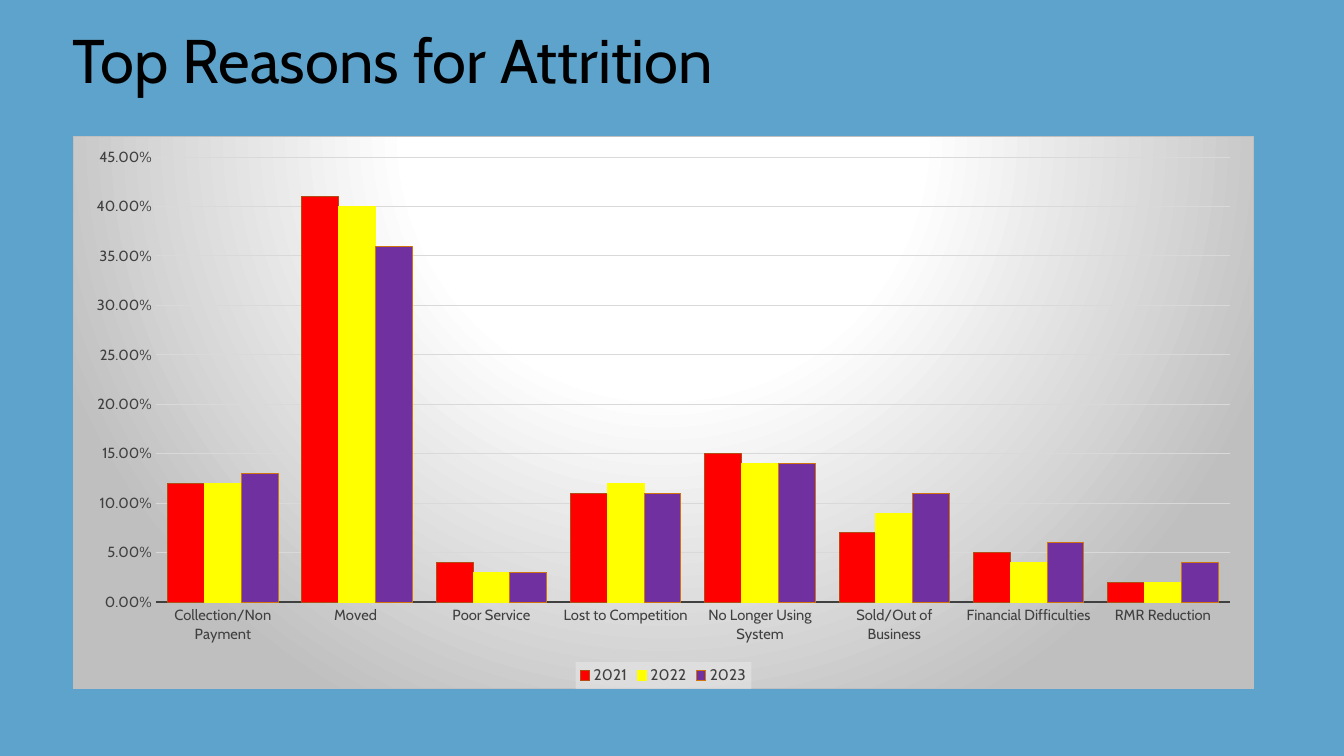
from pptx import Presentation
from pptx.chart.data import CategoryChartData
from pptx.dml.color import RGBColor
from pptx.enum.chart import XL_CHART_TYPE as ChartType, XL_LEGEND_POSITION as LegendPosition
from pptx.enum.chart import XL_TICK_MARK as TickMark
from pptx.enum.text import MSO_ANCHOR as Anchor, PP_ALIGN as Align
from pptx.oxml import parse_xml
from pptx.util import Inches, Pt

FONT = "Cabin"
SKY = RGBColor(0x5D, 0xA3, 0xCC)
BLACK = RGBColor(0, 0, 0)
DARK_GRAY = RGBColor(0x40, 0x40, 0x40)
GRID_GRAY = RGBColor(0xD9, 0xD9, 0xD9)
RED = RGBColor(0xFF, 0, 0)
RUST = RGBColor(0xB2, 0x4D, 0x15)
YELLOW = RGBColor(0xFF, 0xFF, 0)
PURPLE = RGBColor(0x70, 0x30, 0xA0)
ORANGE = RGBColor(0xCF, 0x74, 0x0E)

REASONS = ["Collection/Non Payment", "Moved ", "Poor Service", "Lost to Competition",
           "No Longer Using System", "Sold/Out of Business", "Financial Difficulties",
           "RMR Reduction"]
# Year, share by reason, fill, outline
YEARS = [
    ("2021", [0.12, 0.41, 0.04, 0.11, 0.15, 0.07, 0.05, 0.02], RED, RUST),
    ("2022", [0.12, 0.4, 0.03, 0.12, 0.14, 0.09, 0.04, 0.02], YELLOW, YELLOW),
    ("2023", [0.13, 0.36, 0.03, 0.11, 0.14, 0.11, 0.06, 0.04], PURPLE, ORANGE),
]

CHART_BACKGROUND = """
<a:gradFill><a:gsLst>
  <a:gs pos="0"><a:srgbClr val="FFFFFF"/></a:gs>
  <a:gs pos="39000"><a:srgbClr val="FFFFFF"/></a:gs>
  <a:gs pos="100000"><a:srgbClr val="BFBFBF"/></a:gs>
</a:gsLst>
<a:path path="circle"><a:fillToRect l="50000" t="-80000" r="50000" b="180000"/></a:path>
</a:gradFill>
<a:ln w="9525"><a:solidFill><a:srgbClr val="BFBFBF"/></a:solidFill></a:ln>"""
LEGEND_BACKGROUND = """
<a:solidFill><a:srgbClr val="F2F2F2"><a:alpha val="39000"/></a:srgbClr></a:solidFill>
<a:ln><a:noFill/></a:ln>"""


def add_background(element, fill_xml):
    """Put shape properties just before the text properties of a chart part."""
    properties = parse_xml(
        '<c:spPr xmlns:c="http://schemas.openxmlformats.org/drawingml/2006/chart" '
        'xmlns:a="http://schemas.openxmlformats.org/drawingml/2006/main">'
        + fill_xml + "</c:spPr>")
    element.find("{*}txPr").addprevious(properties)


def set_font(font, size, color):
    font.name = FONT
    font.size = Pt(size)
    font.color.rgb = color


presentation = Presentation()
presentation.slide_width = Inches(13.33)
presentation.slide_height = Inches(7.5)
slide = presentation.slides.add_slide(presentation.slide_layouts[6])
slide.background.fill.solid()
slide.background.fill.fore_color.rgb = SKY

# Title
title = slide.shapes.add_textbox(Inches(-0.56), Inches(0.12), Inches(9.06), Inches(0.89))
title.text_frame.word_wrap = True
title.text_frame.vertical_anchor = Anchor.BOTTOM
paragraph = title.text_frame.paragraphs[0]
paragraph.alignment = Align.CENTER
paragraph.line_spacing = 0.9
run = paragraph.add_run()
run.text = "Top Reasons for Attrition "
set_font(run.font, 44, BLACK)

# Chart
chart_data = CategoryChartData(number_format="0.00%")
chart_data.categories = REASONS
for year, shares, fill_color, line_color in YEARS:
    chart_data.add_series(year, shares)
chart = slide.shapes.add_chart(ChartType.COLUMN_CLUSTERED, Inches(0.72), Inches(1.35),
                               Inches(11.72), Inches(5.49), chart_data).chart
chart.has_title = False
set_font(chart.font, 10, DARK_GRAY)
add_background(chart.element, CHART_BACKGROUND)

plot = chart.plots[0]
plot.gap_width = 65
plot.overlap = 0
plot.vary_by_categories = False
for series, (year, shares, fill_color, line_color) in zip(plot.series, YEARS):
    series.invert_if_negative = False
    series.format.fill.solid()
    series.format.fill.fore_color.rgb = fill_color
    series.format.line.color.rgb = line_color
    series.format.line.width = Pt(0.75)

# Axes
for axis in (chart.category_axis, chart.value_axis):
    axis.major_tick_mark = TickMark.NONE
    axis.minor_tick_mark = TickMark.NONE
    set_font(axis.tick_labels.font, 10.5, DARK_GRAY)
chart.category_axis.format.line.color.rgb = DARK_GRAY
chart.category_axis.format.line.width = Pt(1.5)

value_axis = chart.value_axis
value_axis.minimum_scale = 0
value_axis.maximum_scale = 0.45
value_axis.major_unit = 0.05
value_axis.tick_labels.number_format = "0.00%"
value_axis.tick_labels.number_format_is_linked = False
value_axis.format.line.fill.background()
value_axis.major_gridlines.format.line.color.rgb = GRID_GRAY
value_axis.major_gridlines.format.line.width = Pt(0.75)

# Legend
chart.has_legend = True
legend = chart.legend
legend.position = LegendPosition.BOTTOM
legend.include_in_layout = False
set_font(legend.font, 11, DARK_GRAY)
add_background(chart.element.find(".//{*}legend"), LEGEND_BACKGROUND)

presentation.save("out.pptx")
